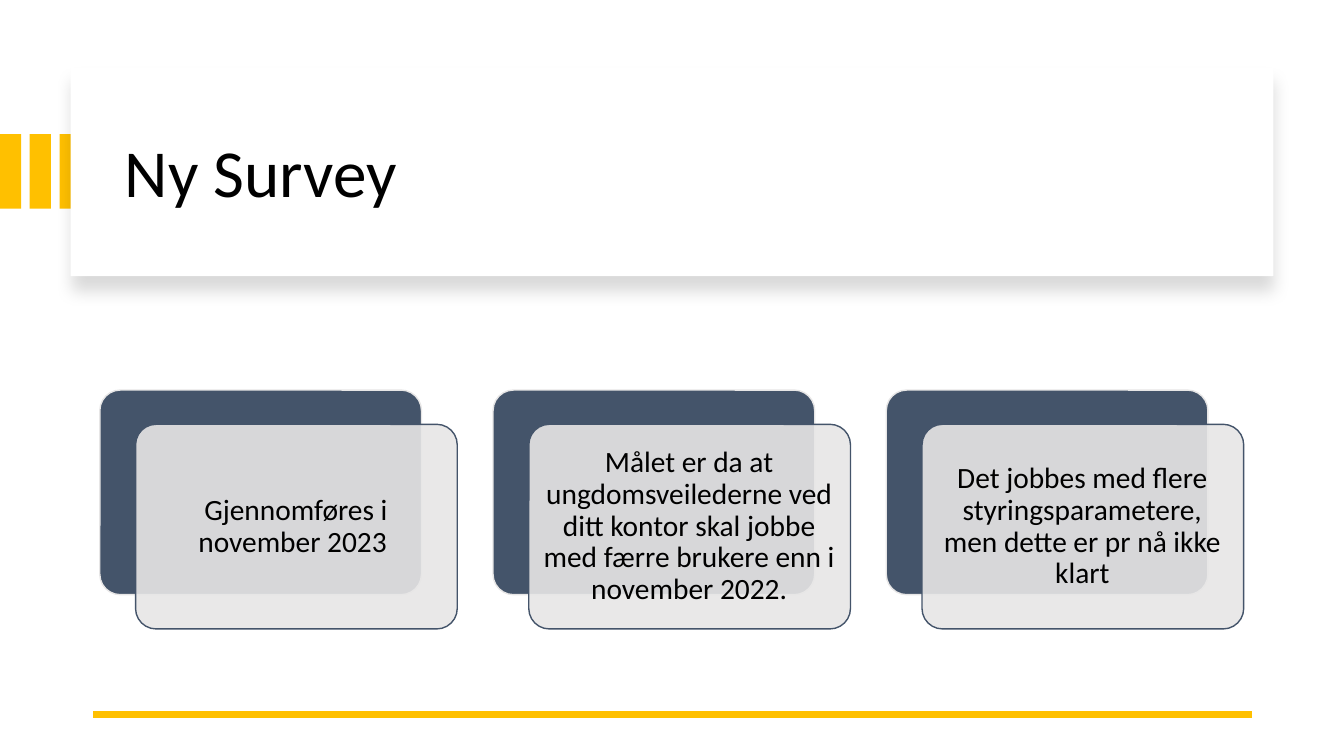
from lxml import etree
from pptx import Presentation
from pptx.dml.color import RGBColor
from pptx.enum.shapes import MSO_CONNECTOR, MSO_SHAPE
from pptx.enum.text import MSO_ANCHOR, PP_ALIGN
from pptx.oxml import parse_xml
from pptx.oxml.ns import nsdecls, qn
from pptx.util import Inches, Pt

YELLOW = RGBColor(0xFF, 0xC0, 0x00)
WHITE = RGBColor(0xFF, 0xFF, 0xFF)
BLACK = RGBColor(0x00, 0x00, 0x00)
NAVY = RGBColor(0x44, 0x54, 0x6A)
GREY = RGBColor(0xE7, 0xE6, 0xE6)

FONT = "Calibri"
CARD_WIDTH, CARD_HEIGHT = 3.19, 2.03
CARD_LEFT, CARD_TOP, CARD_PITCH = 0.99, 3.87, 3.9
CARD_TEXTS = [
    "Gjennomføres i november 2023 ",
    "Målet er da at ungdomsveilederne ved ditt kontor skal jobbe "
    "med færre brukere enn i november 2022.",
    "Det jobbes med flere styringsparametere, men dette er pr nå ikke klart",
]


def add_block(slide, kind, left, top, width, height, fill, line=None):
    shape = slide.shapes.add_shape(
        kind, Inches(left), Inches(top), Inches(width), Inches(height))
    shape.shadow.inherit = False
    shape.fill.solid()
    shape.fill.fore_color.rgb = fill
    if line is None:
        shape.line.fill.background()
    else:
        shape.line.color.rgb = line
        shape.line.width = Pt(1)
    return shape


def add_text(slide, text, left, top, width, height, size, align, inset):
    box = slide.shapes.add_textbox(
        Inches(left), Inches(top), Inches(width), Inches(height))
    frame = box.text_frame
    frame.word_wrap = True
    frame.vertical_anchor = MSO_ANCHOR.MIDDLE
    frame.margin_left = frame.margin_right = Inches(inset)
    frame.margin_top = frame.margin_bottom = Inches(inset)
    frame.text = text
    paragraph = frame.paragraphs[0]
    paragraph.alignment = align
    paragraph.line_spacing = 0.9
    font = paragraph.runs[0].font
    font.name = FONT
    font.size = Pt(size)
    font.color.rgb = BLACK


def add_drop_shadow(shape):
    effects = shape._element.spPr.find(qn("a:effectLst"))
    effects.append(parse_xml(
        f'<a:outerShdw {nsdecls("a")} blurRad="{Pt(11)}" dist="{Pt(10)}" '
        'dir="5400000" algn="t" rotWithShape="0"><a:srgbClr val="000000">'
        '<a:alpha val="15000"/></a:srgbClr></a:outerShdw>'))


def set_opacity(shape, percent):
    color = shape._element.spPr.find(qn("a:solidFill")).find(qn("a:srgbClr"))
    etree.SubElement(color, qn("a:alpha")).set("val", str(percent * 1000))


def add_rule(slide, left, right, y):
    rule = slide.shapes.add_connector(
        MSO_CONNECTOR.STRAIGHT, Inches(right), Inches(y), Inches(left), Inches(y))
    rule.line.color.rgb = YELLOW
    rule.line.width = Pt(4.5)
    etree.SubElement(rule._element.spPr, qn("a:effectLst"))


def add_card(slide, left, text):
    back = add_block(slide, MSO_SHAPE.ROUNDED_RECTANGLE, left, CARD_TOP,
                     CARD_WIDTH, CARD_HEIGHT, NAVY, GREY)
    front = add_block(slide, MSO_SHAPE.ROUNDED_RECTANGLE, left + 0.355,
                      CARD_TOP + 0.34, CARD_WIDTH, CARD_HEIGHT, GREY, NAVY)
    back.adjustments[0] = front.adjustments[0] = 0.1
    set_opacity(front, 90)
    add_text(slide, text, left + 0.41, CARD_TOP + 0.4, CARD_WIDTH - 0.12,
             CARD_HEIGHT - 0.12, 21, PP_ALIGN.CENTER, 0.09)


def main():
    presentation = Presentation()
    presentation.slide_width = Inches(13.33)
    presentation.slide_height = Inches(7.5)
    slide = presentation.slides.add_slide(presentation.slide_layouts[6])

    # Yellow bars at the left edge
    for index in range(3):
        add_block(slide, MSO_SHAPE.RECTANGLE, index * 0.295, 1.33, 0.21, 0.74, YELLOW)

    # Title panel
    panel = add_block(slide, MSO_SHAPE.RECTANGLE, 0.7, 0.67, 11.93, 2.07, WHITE)
    add_drop_shadow(panel)
    add_text(slide, "Ny Survey", 1.14, 0.89, 11.13, 1.7, 48, PP_ALIGN.LEFT, 0.1)

    # Bottom rule
    add_rule(slide, 0.92, 12.42, 7.09)

    # Cards
    for index, text in enumerate(CARD_TEXTS):
        add_card(slide, CARD_LEFT + index * CARD_PITCH, text)

    presentation.save("out.pptx")


if __name__ == "__main__":
    main()
